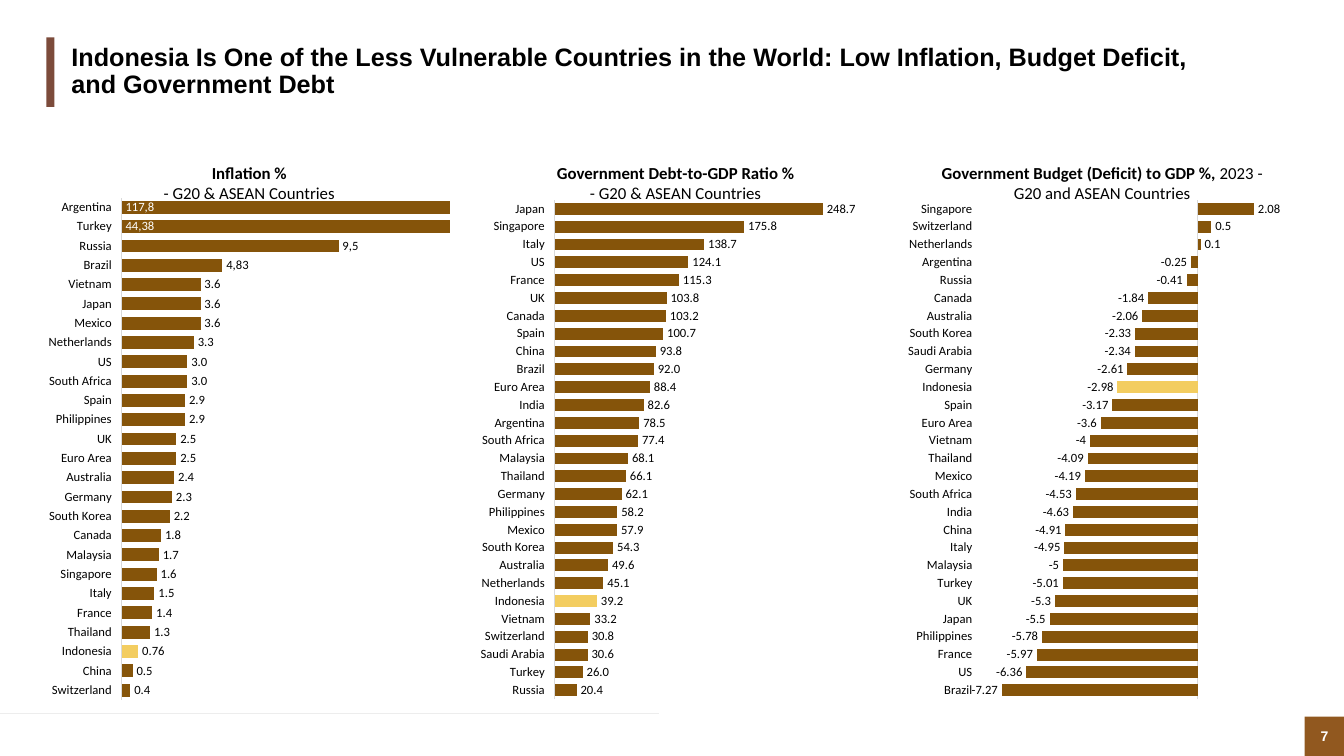
import pptx
import pptx.chart.data
import pptx.dml.color
import pptx.enum.chart
import pptx.enum.shapes
import pptx.enum.text
import pptx.oxml
import pptx.oxml.ns
import pptx.util

Inches = pptx.util.Inches
Pt = pptx.util.Pt
LabelPosition = pptx.enum.chart.XL_LABEL_POSITION

COLORS = {
    "bar": "85540A", "highlight": "F3CD60", "accent": "7C4B3B", "page": "91581F",
    "axis": "D9D9D9", "rule": "EDEDED", "text": "000000", "white": "FFFFFF",
}

INFLATION = {
    "Argentina": 84.5, "Turkey": 42.1, "Russia": 9.9, "Brazil": 4.6, "Vietnam": 3.6,
    "Japan": 3.6, "Mexico": 3.6, "Netherlands": 3.3, "US": 3.0, "South Africa": 3.0,
    "Spain": 2.9, "Philippines": 2.9, "UK": 2.5, "Euro Area": 2.5, "Australia": 2.4,
    "Germany": 2.3, "South Korea": 2.2, "Canada": 1.8, "Malaysia": 1.7, "Singapore": 1.6,
    "Italy": 1.5, "France": 1.4, "Thailand": 1.3, "Indonesia": 0.76, "China": 0.5,
    "Switzerland": 0.4,
}
DEBT = {
    "Japan": 248.7, "Singapore": 175.8, "Italy": 138.7, "US": 124.1, "France": 115.3,
    "UK": 103.8, "Canada": 103.2, "Spain": 100.7, "China": 93.8, "Brazil": 92.0,
    "Euro Area": 88.4, "India": 82.6, "Argentina": 78.5, "South Africa": 77.4,
    "Malaysia": 68.1, "Thailand": 66.1, "Germany": 62.1, "Philippines": 58.2,
    "Mexico": 57.9, "South Korea": 54.3, "Australia": 49.6, "Netherlands": 45.1,
    "Indonesia": 39.2, "Vietnam": 33.2, "Switzerland": 30.8, "Saudi Arabia": 30.6,
    "Turkey": 26.0, "Russia": 20.4,
}
BUDGET = {
    "Singapore": 2.08, "Switzerland": 0.5, "Netherlands": 0.1, "Argentina": -0.25,
    "Russia": -0.41, "Canada": -1.84, "Australia": -2.06, "South Korea": -2.33,
    "Saudi Arabia": -2.34, "Germany": -2.61, "Indonesia": -2.98, "Spain": -3.17,
    "Euro Area": -3.6, "Vietnam": -4, "Thailand": -4.09, "Mexico": -4.19,
    "South Africa": -4.53, "India": -4.63, "China": -4.91, "Italy": -4.95,
    "Malaysia": -5, "Turkey": -5.01, "UK": -5.3, "Japan": -5.5, "Philippines": -5.78,
    "France": -5.97, "US": -6.36, "Brazil": -7.27,
}
INFLATION_LABELS = {
    "Argentina": ("117,8", "white", LabelPosition.INSIDE_BASE),
    "Turkey": ("44,38", "white", LabelPosition.INSIDE_BASE),
    "Russia": ("9,5", "text", LabelPosition.OUTSIDE_END),
    "Brazil": ("4,83", "text", LabelPosition.OUTSIDE_END),
    "Indonesia": ("0.76", "text", LabelPosition.OUTSIDE_END),
}


class SlideBuilder:
    """Draws styled elements on one slide."""

    def __init__(self, slide):
        self.slide = slide

    def color(self, name):
        return pptx.dml.color.RGBColor.from_string(COLORS[name])

    def style(self, font, size, color="text", bold=False, name="Calibri"):
        font.name, font.size, font.bold = name, Pt(size), bold
        font.color.rgb = self.color(color)

    def span(self, para, text, size, **look):
        span = para.add_run()
        span.text = text
        self.style(span.font, size, **look)

    def block(self, left, top, width, height, fill):
        block = self.slide.shapes.add_shape(
            pptx.enum.shapes.MSO_SHAPE.RECTANGLE,
            Inches(left), Inches(top), Inches(width), Inches(height))
        block.shadow.inherit = False
        block.fill.solid()
        block.fill.fore_color.rgb = self.color(fill)
        block.line.fill.background()
        return block

    def page_number(self, left, top, side, number):
        frame = self.block(left, top, side, side, "page").text_frame
        frame.margin_left = frame.margin_right = 0
        frame.vertical_anchor = pptx.enum.text.MSO_ANCHOR.MIDDLE
        para = frame.paragraphs[0]
        para.alignment = pptx.enum.text.PP_ALIGN.CENTER
        self.span(para, number, 10, color="white", bold=True, name="Arial")

    def rule(self, left, top, width):
        rule = self.slide.shapes.add_connector(
            pptx.enum.shapes.MSO_CONNECTOR.STRAIGHT,
            Inches(left), Inches(top), Inches(left + width), Inches(top))
        rule.line.color.rgb = self.color("rule")
        rule.line.width = Pt(0.75)
        properties = rule._element.spPr
        properties.append(properties.makeelement(pptx.oxml.ns.qn("a:effectLst"), {}))

    def heading(self, left, top, width, height, text):
        box = self.slide.shapes.add_textbox(
            Inches(left), Inches(top), Inches(width), Inches(height))
        frame = box.text_frame
        frame.word_wrap = True
        frame.vertical_anchor = pptx.enum.text.MSO_ANCHOR.MIDDLE
        para = frame.paragraphs[0]
        para.line_spacing = 0.9
        self.span(para, text, 18, bold=True, name="Arial")

    def place(self, parent, index, inner=False, **position):
        for old in parent.findall(pptx.oxml.ns.qn("c:layout")):
            parent.remove(old)
        settings = [("layoutTarget", "inner")] if inner else []
        settings += [("xMode", "edge"), ("yMode", "edge"), *position.items()]
        body = "".join(f'<c:{tag} val="{value}"/>' for tag, value in settings)
        parent.insert(index, pptx.oxml.parse_xml(
            f'<c:layout {pptx.oxml.ns.nsdecls("c")}>'
            f"<c:manualLayout>{body}</c:manualLayout></c:layout>"))

    def chart_title(self, chart, lines, left):
        frame = chart.chart_title.text_frame
        for index, spans in enumerate(lines):
            para = frame.add_paragraph() if index else frame.paragraphs[0]
            para.alignment = pptx.enum.text.PP_ALIGN.CENTER
            for text, bold in spans:
                self.span(para, text, 12, bold=bold)
        self.place(chart.chart_title._element, 1, x=left, y=0.037)

    def bar_chart(self, left, values, lines, title_left, limits, plot_area,
                  number_format="#,##0.0", special_labels=None):
        countries = list(reversed(values))
        data = pptx.chart.data.CategoryChartData()
        data.categories = countries
        data.add_series("Series 1", [values[country] for country in countries])
        chart = self.slide.shapes.add_chart(
            pptx.enum.chart.XL_CHART_TYPE.BAR_CLUSTERED,
            Inches(left), Inches(1.36), Inches(4.24), Inches(5.68), data).chart
        self.style(chart.font, 10.5)
        chart.has_legend = False
        self.chart_title(chart, lines, title_left)

        axis = chart.category_axis
        axis.tick_label_position = pptx.enum.chart.XL_TICK_LABEL_POSITION.LOW
        axis.major_tick_mark = pptx.enum.chart.XL_TICK_MARK.NONE
        axis.has_major_gridlines = False
        axis.format.line.color.rgb = self.color("axis")
        axis.format.line.width = Pt(0.75)
        self.style(axis.tick_labels.font, 9)
        chart.value_axis.minimum_scale, chart.value_axis.maximum_scale = limits
        chart.value_axis.has_major_gridlines = False
        chart.value_axis.visible = False

        plot = chart.plots[0]
        plot.gap_width = 50
        plot.vary_by_categories = False
        series = plot.series[0]
        series.invert_if_negative = False
        series.format.fill.solid()
        series.format.fill.fore_color.rgb = self.color("bar")
        highlight = series.points[countries.index("Indonesia")].format.fill
        highlight.solid()
        highlight.fore_color.rgb = self.color("highlight")

        labels = series.data_labels
        labels.show_value = True
        labels.number_format = number_format
        labels.number_format_is_linked = False
        labels.position = LabelPosition.OUTSIDE_END
        self.style(labels.font, 9)
        for country, (text, color, position) in (special_labels or {}).items():
            label = series.points[countries.index(country)].data_label
            self.span(label.text_frame.paragraphs[0], text, 9, color=color)
            label.position = position
        area = chart._chartSpace.chart.plotArea
        self.place(area, 0, inner=True, **dict(zip("xywh", plot_area)))


def main():
    deck = pptx.Presentation()
    deck.slide_width, deck.slide_height = Inches(13.33), Inches(7.5)
    page = SlideBuilder(deck.slides.add_slide(deck.slide_layouts[6]))
    page.block(0.46, 0.37, 0.08, 0.69, "accent")
    page.rule(0, 7.08, 6.54)
    page.page_number(12.94, 7.11, 0.39, "7")
    page.heading(0.61, 0.37, 11.61, 0.69,
                 "Indonesia Is One of the Less Vulnerable Countries in the World: "
                 "Low Inflation, Budget Deficit, and Government Debt")
    group = [("- G20 & ASEAN Countries", False)]
    wide_plot = (0.222, 0.11, 0.757, 0.872)
    page.bar_chart(0.32, INFLATION, [[("Inflation %", True)], group], 0.3, (0, 15),
                   (0.209, 0.106, 0.769, 0.877), special_labels=INFLATION_LABELS)
    page.bar_chart(4.56, DEBT, [[("Government Debt-to-GDP Ratio %", True)], group],
                   0.22, (0, 300), wide_plot)
    page.bar_chart(8.8, BUDGET,
                   [[("Government Budget (Deficit) to GDP %,", True), (" 2023 -", False)],
                    [("G20 and ASEAN Countries", False)]],
                   0.12, (-8, 4), wide_plot, number_format="General")
    deck.save("out.pptx")


if __name__ == "__main__":
    main()
